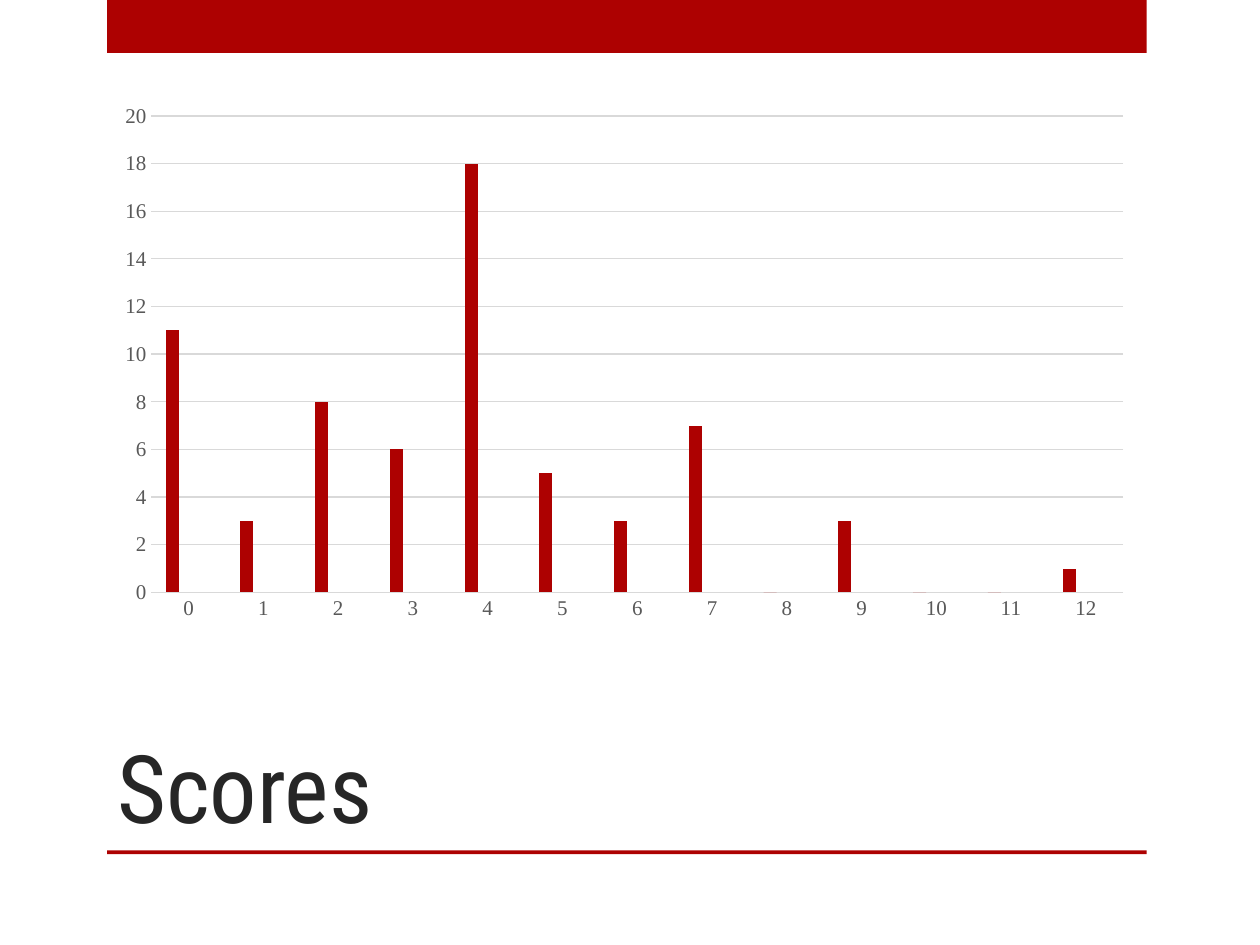
from pptx import Presentation
from pptx.chart.data import CategoryChartData
from pptx.dml.color import RGBColor
from pptx.enum.chart import XL_CHART_TYPE, XL_TICK_MARK
from pptx.enum.shapes import MSO_SHAPE
from pptx.enum.text import MSO_ANCHOR, MSO_AUTO_SIZE, PP_ALIGN
from pptx.oxml import parse_xml
from pptx.oxml.ns import nsdecls
from pptx.util import Inches, Pt

COLORS = {"red": "AD0101", "brown": "726056", "tan": "AC956E",
          "title": "262626", "label": "595959", "grid": "D9D9D9"}
SCORE_COUNTS = [11, 3, 8, 6, 18, 5, 3, 7, 0, 3, 0, 0, 1]
SERIES = [("Series 1", SCORE_COUNTS, "red"),
          ("Series 2", [None] * len(SCORE_COUNTS), "brown"),
          ("Series 3", [None] * len(SCORE_COUNTS), "tan")]


def apply(target, values):
    for name, value in values.items():
        setattr(target, name, value)


class SlideBuilder:
    """Holds the style and the slide being filled."""
    title_font = "Roboto Condensed"
    chart_font = "Times New Roman"

    def __init__(self, slide):
        self.slide = slide

    def color(self, name):
        return RGBColor.from_string(COLORS[name])

    def style_font(self, font, name, size, color):
        apply(font, {"name": name, "size": Pt(size), "bold": False})
        font.color.rgb = self.color(color)

    def style_line(self, line, color):
        line.color.rgb = self.color(color)
        line.width = Pt(0.75)

    def bar(self, left, top, width, height):
        shape = self.slide.shapes.add_shape(
            MSO_SHAPE.RECTANGLE, *map(Inches, (left, top, width, height)))
        shape.shadow.inherit = False
        shape.fill.solid()
        shape.fill.fore_color.rgb = self.color("red")
        shape.line.fill.background()

    def title(self, text, left, top, width, height):
        title = self.slide.shapes.title
        apply(title, {"left": Inches(left), "top": Inches(top),
                      "width": Inches(width), "height": Inches(height)})
        apply(title.text_frame, {"text": text, "word_wrap": True,
                                 "auto_size": MSO_AUTO_SIZE.NONE,
                                 "vertical_anchor": MSO_ANCHOR.BOTTOM})
        para = title.text_frame.paragraphs[0]
        apply(para, {"alignment": PP_ALIGN.LEFT, "line_spacing": 0.9})
        self.style_font(para.runs[0].font, self.title_font, 54, "title")

    def column_chart(self, categories, series, left, top, width, height):
        data = CategoryChartData()
        data.categories = categories
        for name, values, _ in series:
            data.add_series(name, values)
        chart = self.slide.shapes.add_chart(
            XL_CHART_TYPE.COLUMN_CLUSTERED,
            *map(Inches, (left, top, width, height)), data).chart
        apply(chart, {"has_legend": False, "has_title": False})
        apply(chart.font, {"name": self.chart_font, "size": Pt(10)})

        plot = chart.plots[0]
        apply(plot, {"gap_width": 219, "overlap": -27, "vary_by_categories": False})
        for column, (_, _, color) in zip(plot.series, series):
            column.format.fill.solid()
            column.format.fill.fore_color.rgb = self.color(color)
            column.invert_if_negative = False

        for axis in (chart.category_axis, chart.value_axis):
            apply(axis, {"major_tick_mark": XL_TICK_MARK.NONE,
                         "minor_tick_mark": XL_TICK_MARK.NONE})
            self.style_font(axis.tick_labels.font, self.chart_font, 12, "label")
        self.style_line(chart.category_axis.format.line, "grid")
        apply(chart.value_axis, {"minimum_scale": 0, "maximum_scale": 20,
                                 "major_unit": 2, "has_major_gridlines": True})
        chart.value_axis.format.line.fill.background()
        self.style_line(chart.value_axis.major_gridlines.format.line, "grid")
        self.place_plot(chart, x=0.045, y=0.04, w=0.935, h=0.89)

    def place_plot(self, chart, **fractions):
        """Fix the inner plot area as fractions of the chart."""
        sizes = "".join(f'<c:{key} val="{value}"/>' for key, value in fractions.items())
        layout = parse_xml(
            f'<c:layout {nsdecls("c")}><c:manualLayout><c:layoutTarget val="inner"/>'
            f'<c:xMode val="edge"/><c:yMode val="edge"/>{sizes}'
            '</c:manualLayout></c:layout>')
        plot_area = chart.element.chart.plotArea
        for old in plot_area.findall(layout.tag):
            plot_area.remove(old)
        plot_area.insert(0, layout)


def main():
    deck = Presentation()
    deck.slide_width, deck.slide_height = Inches(10), Inches(7.5)
    page = SlideBuilder(deck.slides.add_slide(deck.slide_layouts[5]))
    page.bar(0.85, 0, 8.25, 0.42)
    page.bar(0.85, 6.75, 8.25, 0.03)
    page.title("Scores", 0.83, 5, 7.42, 1.75)
    categories = [str(score) for score in range(len(SCORE_COUNTS))]
    page.column_chart(categories, SERIES, 0.83, 0.75, 8.25, 4.25)
    deck.save("out.pptx")


if __name__ == "__main__":
    main()
